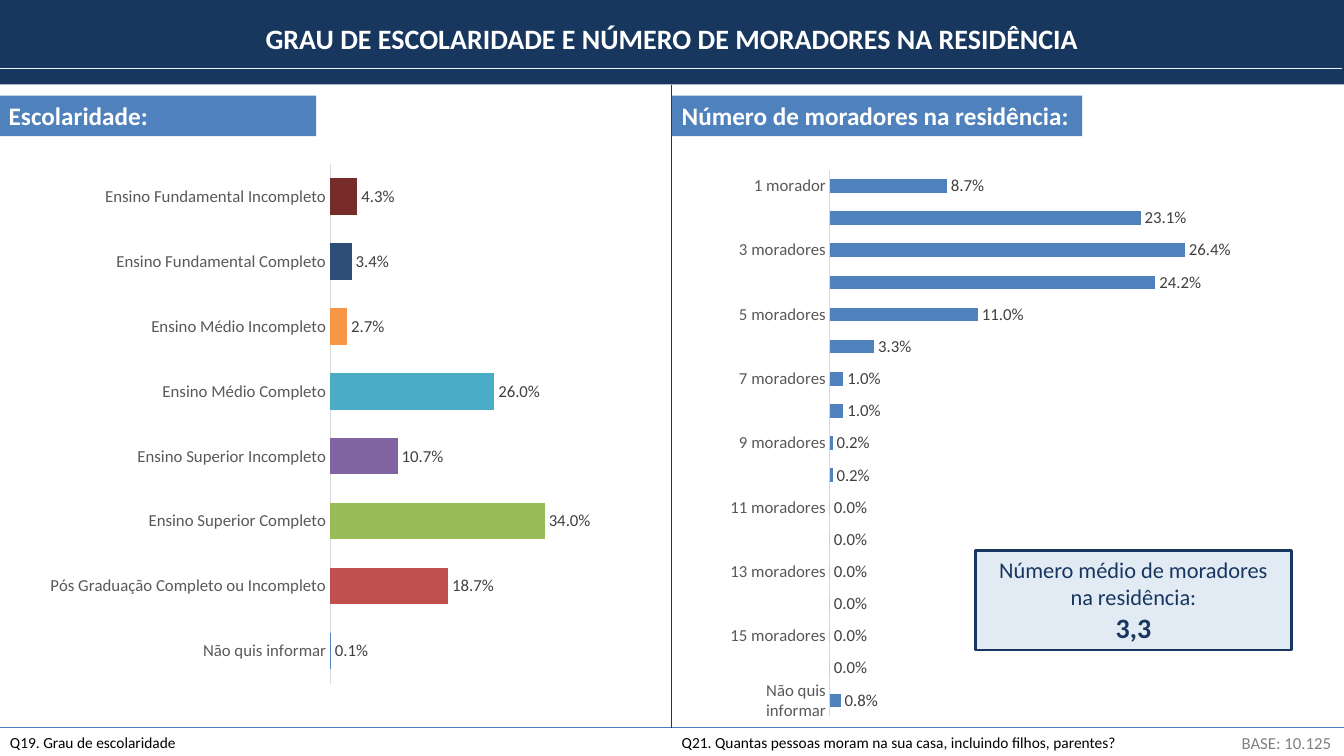
from dataclasses import dataclass
from lxml.etree import SubElement as Sub
from pptx import Presentation
from pptx.chart.data import CategoryChartData as Data
from pptx.dml.color import RGBColor as Rgb
from pptx.enum.chart import XL_CHART_TYPE as Kind
from pptx.enum.chart import XL_LABEL_POSITION as Spot
from pptx.enum.chart import XL_TICK_MARK as Tick
from pptx.enum.shapes import MSO_CONNECTOR as Link
from pptx.enum.shapes import MSO_SHAPE as Form
from pptx.enum.text import MSO_ANCHOR as Anchor
from pptx.enum.text import MSO_AUTO_SIZE as Auto
from pptx.enum.text import PP_ALIGN as Align
from pptx.oxml.ns import qn
from pptx.util import Cm, Pt

FONT = "Calibri"
NAVY, BLUE, WHITE, BLACK = "17375E", "4F81BD", "FFFFFF", "000000"
WIDE, HIGH = 33.87, 19.05
MID, FOOT = 16.93, 18.34
Area = tuple[float, float, float, float]


@dataclass
class Run:
    text: str
    size: float
    tint: str
    bold: bool = False


@dataclass
class Box:
    area: Area
    runs: tuple[Run, ...] = ()
    align: Align = Align.LEFT
    fill: str = ""
    edge: str = ""
    alpha: int = 100
    grow: bool = True


@dataclass
class Line:
    start: tuple[float, float]
    end: tuple[float, float]
    tint: str
    width: float


@dataclass
class Bars:
    area: Area
    plot: Area
    rows: dict[str, float]
    gap: int
    top: float
    tints: tuple[str, ...] = ()
    flip: bool = False


def hue(code: str) -> Rgb:
    return Rgb.from_string(code)


def style(font, size: float, tint: str, bold: bool = False) -> None:
    font.name, font.size, font.bold = FONT, Pt(size), bold
    font.color.rgb = hue(tint)


def paint(fill, tint: str) -> None:
    fill.solid()
    fill.fore_color.rgb = hue(tint)


def draw_line(slide, line: Line) -> None:
    ends = [Cm(n) for n in line.start + line.end]
    rule = slide.shapes.add_connector(Link.STRAIGHT, *ends)
    rule.line.color.rgb = hue(line.tint)
    rule.line.width = Pt(line.width)
    Sub(rule.element.spPr, qn("a:effectLst"))


def draw_box(slide, box: Box) -> None:
    area = [Cm(n) for n in box.area]
    if box.fill:
        shape = slide.shapes.add_shape(Form.RECTANGLE, *area)
        shape.shadow.inherit = False
        paint(shape.fill, box.fill)
        if box.alpha < 100:
            tone = shape.element.spPr.find(qn("a:solidFill"))[0]
            Sub(tone, qn("a:alpha"), val=str(box.alpha * 1000))
        if box.edge:
            shape.line.color.rgb = hue(box.edge)
            shape.line.width = Pt(2)
        else:
            shape.line.fill.background()
    else:
        shape = slide.shapes.add_textbox(*area)
    frame = shape.text_frame
    frame.word_wrap = True
    frame.vertical_anchor = Anchor.TOP if box.grow else Anchor.MIDDLE
    if box.grow and box.runs:
        frame.auto_size = Auto.SHAPE_TO_FIT_TEXT
    for i, item in enumerate(box.runs):
        para = frame.add_paragraph() if i else frame.paragraphs[0]
        para.alignment = box.align
        run = para.add_run()
        run.text = item.text
        style(run.font, item.size, item.tint, item.bold)


def set_plot(chart, plot: Area) -> None:
    area = chart.element.find(".//" + qn("c:plotArea")) if hasattr(chart, "element") \
        else chart._chartSpace.find(".//" + qn("c:plotArea"))
    for old in area.findall(qn("c:layout")):
        area.remove(old)
    lay = Sub(area, qn("c:layout"))
    area.insert(0, lay)
    man = Sub(lay, qn("c:manualLayout"))
    Sub(man, qn("c:layoutTarget"), val="inner")
    for key in ("xMode", "yMode"):
        Sub(man, qn("c:" + key), val="edge")
    for key, part in zip("xywh", plot):
        Sub(man, qn("c:" + key), val=str(part))


def draw_bars(slide, bars: Bars) -> None:
    data = Data(number_format="0.0%")
    data.categories = list(bars.rows)
    data.add_series("Series 1", list(bars.rows.values()))
    area = [Cm(n) for n in bars.area]
    chart = slide.shapes.add_chart(Kind.BAR_CLUSTERED, *area, data).chart
    chart.has_title = chart.has_legend = False
    style(chart.font, 10, BLACK)
    names, scale = chart.category_axis, chart.value_axis
    names.major_tick_mark = names.minor_tick_mark = Tick.NONE
    names.has_major_gridlines = scale.has_major_gridlines = False
    names.reverse_order = bars.flip
    names.format.line.color.rgb = hue("D9D9D9")
    names.format.line.width = Pt(0.75)
    style(names.tick_labels.font, 12, "595959")
    scale.minimum_scale, scale.maximum_scale = 0, bars.top
    scale.visible = False
    plot = chart.plots[0]
    plot.gap_width, plot.vary_by_categories = bars.gap, False
    row = plot.series[0]
    paint(row.format.fill, BLUE)
    for i, tint in enumerate(bars.tints):
        paint(row.points[i].format.fill, tint)
    tags = row.data_labels
    tags.show_value = True
    tags.number_format, tags.number_format_is_linked = "0.0%", False
    tags.position = Spot.OUTSIDE_END
    style(tags.font, 12, "404040")
    set_plot(chart, bars.plot)


LEVELS = {
    "Não quis informar": 0.001, "Pós Graduação Completo ou Incompleto": 0.187,
    "Ensino Superior Completo": 0.34, "Ensino Superior Incompleto": 0.107,
    "Ensino Médio Completo": 0.26, "Ensino Médio Incompleto": 0.027,
    "Ensino Fundamental Completo": 0.034, "Ensino Fundamental Incompleto": 0.043,
}
TINTS = (BLUE, "C0504D", "9BBB59", "8064A2", "4BACC6", "F79646", "2C4D75", "772C2A")
SHARES = (0.087, 0.231, 0.264, 0.242, 0.11, 0.033, 0.01, 0.01, 0.002, 0.002,
          0, 0, 0, 0, 0, 0, 0.008)
HOMES = ["1 morador", *(f"{n} moradores" for n in range(2, 16)),
         "Mais de 15 moradores", "Não quis informar"]

ITEMS = (
    Line((0, FOOT), (WIDE, FOOT), "4B7EBC", 0.75),
    Box((0, FOOT, MID, 0.74), (Run("Q19. Grau de escolaridade", 11, BLACK),)),
    Box((-0.03, 0, 33.9, 2.13), fill=NAVY),
    Box((0, 0.41, WIDE, 1.12),
        (Run("GRAU DE ESCOLARIDADE E NÚMERO DE MORADORES NA RESIDÊNCIA", 20, WHITE, True),),
        Align.CENTER),
    Line((-0.08, 1.73), (33.81, 1.73), "F2F2F2", 1),
    Line((MID, 2.13), (MID, FOOT), NAVY, 1),
    Box((MID, FOOT, 11.81, 0.74),
        (Run("Q21. Quantas pessoas moram na sua casa, incluindo filhos, parentes?", 11, BLACK),)),
    Bars((0.99, 3.86, 15.6, 13.64), (0.47, 0.02, 0.51, 0.96), LEVELS, 78, 0.5, TINTS),
    Bars((18.14, 3.99, 13.21, 14.5), (0.21, 0.02, 0.77, 0.95),
         dict(zip(HOMES, SHARES)), 139, 0.3, flip=True),
    Box((24.59, 13.87, 7.95, 2.51),
        (Run("Número médio de moradores na residência:", 16, NAVY),
         Run("3,3", 20, NAVY, True)),
        Align.CENTER, "DCE6F2", NAVY, 82, False),
    Box((-0.03, 2.41, 8, 1.02), (Run("Escolaridade:", 18, WHITE, True),), fill=BLUE),
    Box((MID, 2.41, 10.34, 1.02),
        (Run("Número de moradores na residência:", 18, WHITE, True),), fill=BLUE),
    Box((30.12, FOOT, 3.68, 0.76), (Run("BASE: 10.125", 12, "808080"),), Align.RIGHT),
)


def main() -> None:
    deck = Presentation()
    deck.slide_width, deck.slide_height = Cm(WIDE), Cm(HIGH)
    slide = deck.slides.add_slide(deck.slide_layouts[6])
    tools = {Line: draw_line, Box: draw_box, Bars: draw_bars}
    for item in ITEMS:
        tools[type(item)](slide, item)
    deck.save("out.pptx")


if __name__ == "__main__":
    main()
